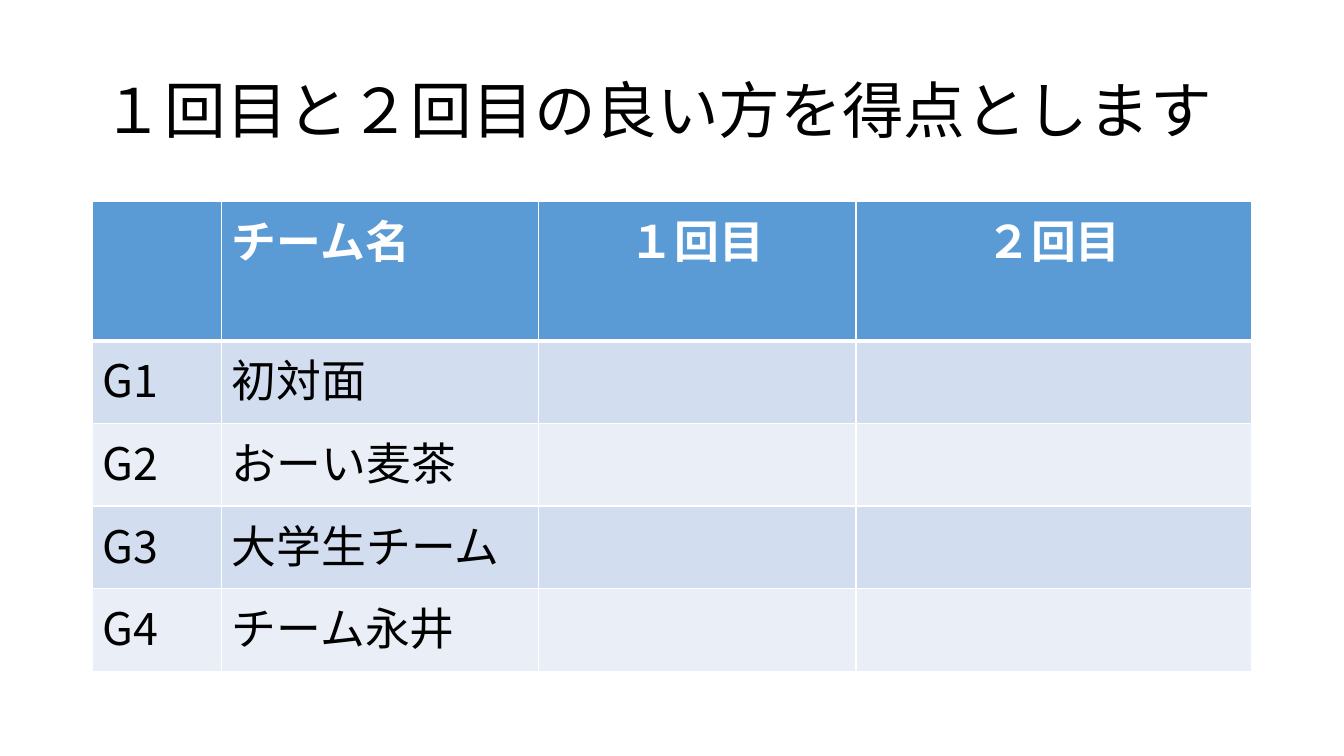
"""Builds a slide with an empty two-round score table for four teams."""
from lxml import etree
from pptx import Presentation, util as u
from pptx.dml.color import RGBColor
from pptx.enum import text
from pptx.oxml import ns

TITLE = "１回目と２回目の良い方を得点とします"
HEAD = ["", "チーム名", "１回目", "２回目"]
TEAMS = ["初対面", "おーい麦茶", "大学生チーム", "チーム永井"]
COLS = [1.28, 3.14, 3.15, 3.92]
ROWS = [1.38] + [0.82] * len(TEAMS)
LEFT, TOP, WIDE = 0.92, 2, 11.5
FONT = "Noto Sans CJK JP"
HUES = {"head": "5B9BD5", "odd": "D2DEEF", "even": "EAEFF7",
        "white": "FFFFFF", "black": "000000"}


def add_run(para, words, size, hue, bold=False):
    run = para.add_run()
    run.text = words
    font = run.font
    font.size, font.bold, font.name = u.Pt(size), bold, FONT
    font.color.rgb = RGBColor.from_string(HUES[hue])
    east = etree.SubElement(font._element, ns.qn("a:ea"))
    east.set("typeface", FONT)


def add_edges(cell, base):
    props = cell._tc.get_or_add_tcPr()
    for side, width in zip("LRTB", (1, 1, 1, base)):
        line = etree.SubElement(props, ns.qn(f"a:ln{side}"), w=str(u.Pt(width)))
        fill = etree.SubElement(line, ns.qn("a:solidFill"))
        etree.SubElement(fill, ns.qn("a:srgbClr"), val=HUES["white"])


def add_title(slide):
    title = slide.shapes.title
    title.left, title.top = u.Inches(LEFT), u.Inches(0.4)
    title.width, title.height = u.Inches(WIDE), u.Inches(1.45)
    frame = title.text_frame
    frame.word_wrap = True
    frame.vertical_anchor = text.MSO_ANCHOR.MIDDLE
    para = frame.paragraphs[0]
    para.alignment, para.line_spacing = text.PP_ALIGN.LEFT, 0.9
    add_run(para, TITLE, 44, "black")


def add_scores(slide):
    grid = [HEAD] + [[f"G{n}", team, "", ""] for n, team in enumerate(TEAMS, 1)]
    table = slide.shapes.add_table(
        len(ROWS), len(COLS), u.Inches(LEFT), u.Inches(TOP),
        u.Inches(WIDE), u.Inches(sum(ROWS))).table
    for col, width in zip(table.columns, COLS):
        col.width = u.Inches(width)
    for r, (row, words) in enumerate(zip(table.rows, grid)):
        row.height = u.Inches(ROWS[r])
        top = r == 0
        hue = "head" if top else "odd" if r % 2 else "even"
        for c, (cell, word) in enumerate(zip(row.cells, words)):
            add_edges(cell, 3 if r == 0 else 1)
            cell.fill.solid()
            cell.fill.fore_color.rgb = RGBColor.from_string(HUES[hue])
            para = cell.text_frame.paragraphs[0]
            if top and c > 1:
                para.alignment = text.PP_ALIGN.CENTER
            if word:
                add_run(para, word, 32, "white" if top else "black", top)


def main():
    deck = Presentation()
    deck.slide_width, deck.slide_height = u.Inches(13.33), u.Inches(7.5)
    slide = deck.slides.add_slide(deck.slide_layouts[5])
    add_title(slide)
    add_scores(slide)
    deck.save("out.pptx")


if __name__ == "__main__":
    main()
